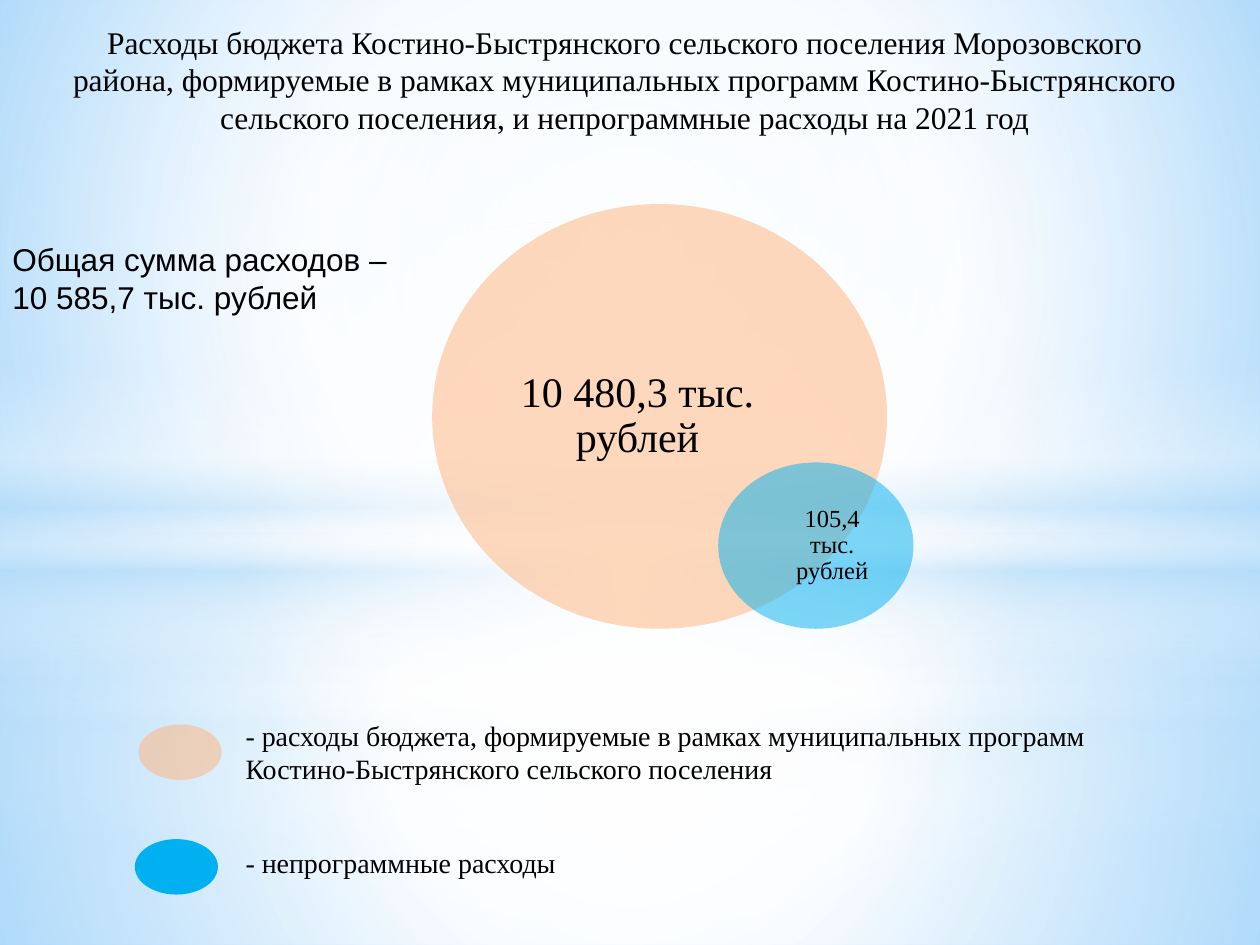
from dataclasses import dataclass

from lxml import etree
from pptx import Presentation
from pptx.dml.color import RGBColor
from pptx.enum import shapes, text
from pptx.oxml.ns import qn
from pptx.util import Inches, Pt


@dataclass(frozen=True)
class Theme:
    white: str = "FFFFFF"
    haze: str = "B4DCFA"
    sky_center: str = "9ED5FF"
    sky_edge: str = "5BB9FF"
    program: str = "FFB37A"
    other: str = "00B0F0"
    ink: str = "000000"
    serif: str = "Times New Roman"
    sans: str = "Arial"
    heading: int = 18
    legend: int = 16
    large_value: int = 24
    small_value: int = 14


THEME = Theme()
CENTER = (50, 50, 50, 50)


def lengths(box):
    return [Inches(value) for value in box]


def add_alpha(color, percent):
    etree.SubElement(color, qn("a:alpha")).set("val", str(percent * 1000))


def set_gradient(fill, owner, stops, focus=None):
    """Fill with (position, colour, opacity) stops: radial round focus, else top to bottom."""
    fill.gradient()
    gradient = owner.find(".//" + qn("a:gradFill"))
    for child in list(gradient):
        gradient.remove(child)
    stop_list = etree.SubElement(gradient, qn("a:gsLst"))
    for position, color, opacity in stops:
        stop = etree.SubElement(stop_list, qn("a:gs"), pos=str(position * 1000))
        add_alpha(etree.SubElement(stop, qn("a:srgbClr"), val=color), opacity)
    if focus:
        radial = etree.SubElement(gradient, qn("a:path"), path="circle")
        sides = {side: str(value * 1000) for side, value in zip("ltrb", focus)}
        etree.SubElement(radial, qn("a:fillToRect"), **sides)
    else:
        etree.SubElement(gradient, qn("a:lin"), ang="5400000", scaled="0")


def add_plain_shape(slide, kind, box):
    shape = slide.shapes.add_shape(kind, *lengths(box))
    shape.shadow.inherit = False
    shape.line.fill.background()
    return shape


def add_ellipse(slide, box, color, opacity=100):
    ellipse = add_plain_shape(slide, shapes.MSO_SHAPE.OVAL, box)
    ellipse.fill.solid()
    ellipse.fill.fore_color.rgb = RGBColor.from_string(color)
    if opacity < 100:
        add_alpha(ellipse.element.spPr.find(".//" + qn("a:srgbClr")), opacity)
    return ellipse


def write(frame, words, size, font=THEME.serif, align=text.PP_ALIGN.LEFT):
    frame.word_wrap = True
    frame.text = words
    paragraph = frame.paragraphs[0]
    paragraph.alignment = align
    style = paragraph.runs[0].font
    style.name, style.size = font, Pt(size)
    style.color.rgb = RGBColor.from_string(THEME.ink)
    return paragraph


def add_label(slide, box, words, size, **style):
    label = slide.shapes.add_textbox(*lengths(box))
    write(label.text_frame, words, size, **style)


def add_backdrop_layer(slide, box, horizon, band_top, opacity_shift, glow_end):
    """Haze above and below the horizon, a striped band, and a central glow."""
    left, top, width, height = box
    white, haze = THEME.white, THEME.haze
    rectangle, oval = shapes.MSO_SHAPE.RECTANGLE, shapes.MSO_SHAPE.OVAL
    shift = opacity_shift
    ground = [(0, white, 91 + shift), (37, white, 76 + shift), (100, haze, 79 + shift)]
    sky = [(0, white, 89 + shift), (48, white, 62 + shift), (100, haze, 79 + shift)]
    band = [(0, white, 0), (29, white, 30), (45, haze, 40),
            (55, white, 26), (65, haze, 60), (100, white, 0)]
    glow = [(0, white, 100), (glow_end, white, 0)]
    for kind, y, part_height, stops, focus in (
        (rectangle, horizon, height - horizon, ground, CENTER),
        (rectangle, 0, horizon, sky, CENTER),
        (rectangle, band_top, 2.5, band, None),
        (oval, 1.75, 5.58, glow, CENTER),
    ):
        part = add_plain_shape(slide, kind, (left, top + y, width, part_height))
        set_gradient(part.fill, part.element, stops, focus)


def add_backdrop(slide, box):
    stops = [(0, THEME.sky_center, 100), (60, THEME.white, 100), (100, THEME.sky_edge, 100)]
    set_gradient(slide.background.fill, slide.element, stops, (20, 10, 20, 60))
    add_backdrop_layer(slide, box, 5.58, 4.12, 0, 56)
    add_backdrop_layer(slide, box, 4.23, 2.9, 1, 54)


def add_legend(slide, box):
    left, top, width, _ = box
    entries = (
        ("- расходы бюджета, формируемые в рамках муниципальных программ "
         "Костино-Быстрянского сельского поселения",
         THEME.program, 50, (0.03, 0.1), (0, 0.64)),
        ("- непрограммные расходы", THEME.other, 100, (0, 1.01), (1.01, 0.37)),
    )
    for words, color, opacity, (key_x, key_y), (label_y, label_height) in entries:
        add_ellipse(slide, (left + key_x, top + key_y, 0.66, 0.44), color, opacity)
        add_label(slide, (left + 0.78, top + label_y, width - 0.78, label_height),
                  words, THEME.legend)


def add_overlapping_circles(slide, box):
    left, top, width, height = box
    circles = (
        ("10 480,3 тыс. рублей", THEME.program, THEME.large_value,
         (left, top, 3.61, height), (0, 0.35)),
        ("105,4 тыс. рублей", THEME.other, THEME.small_value,
         (left + width - 1.55, top + height - 1.32, 1.55, 1.32), (0.26, 0)),
    )
    for words, color, size, circle_box, (inset_left, inset_right) in circles:
        circle = add_ellipse(slide, circle_box, color, 50)
        frame = circle.text_frame
        frame.margin_left, frame.margin_right = Inches(inset_left), Inches(inset_right)
        frame.margin_top = frame.margin_bottom = 0
        frame.vertical_anchor = text.MSO_ANCHOR.MIDDLE
        write(frame, words, size, align=text.PP_ALIGN.CENTER).line_spacing = 0.9


def main():
    deck = Presentation()
    deck.slide_width, deck.slide_height = Inches(10), Inches(7.5)
    slide = deck.slides.add_slide(deck.slide_layouts[6])
    add_backdrop(slide, (0, 0, 10, 7.5))
    add_label(slide, (0.43, 0.13, 9.06, 1),
              "Расходы бюджета Костино-Быстрянского сельского поселения Морозовского "
              "района, формируемые в рамках муниципальных программ Костино-Быстрянского "
              "сельского поселения, и непрограммные расходы на 2021 год",
              THEME.heading, align=text.PP_ALIGN.CENTER)
    add_legend(slide, (1.07, 5.65, 8.5, 1.45))
    add_overlapping_circles(slide, (3.43, 1.62, 3.82, 3.37))
    add_label(slide, (0, 1.86, 3.27, 0.7),
              "Общая сумма расходов – 10 585,7 тыс. рублей", THEME.heading, font=THEME.sans)
    deck.save("out.pptx")


if __name__ == "__main__":
    main()
